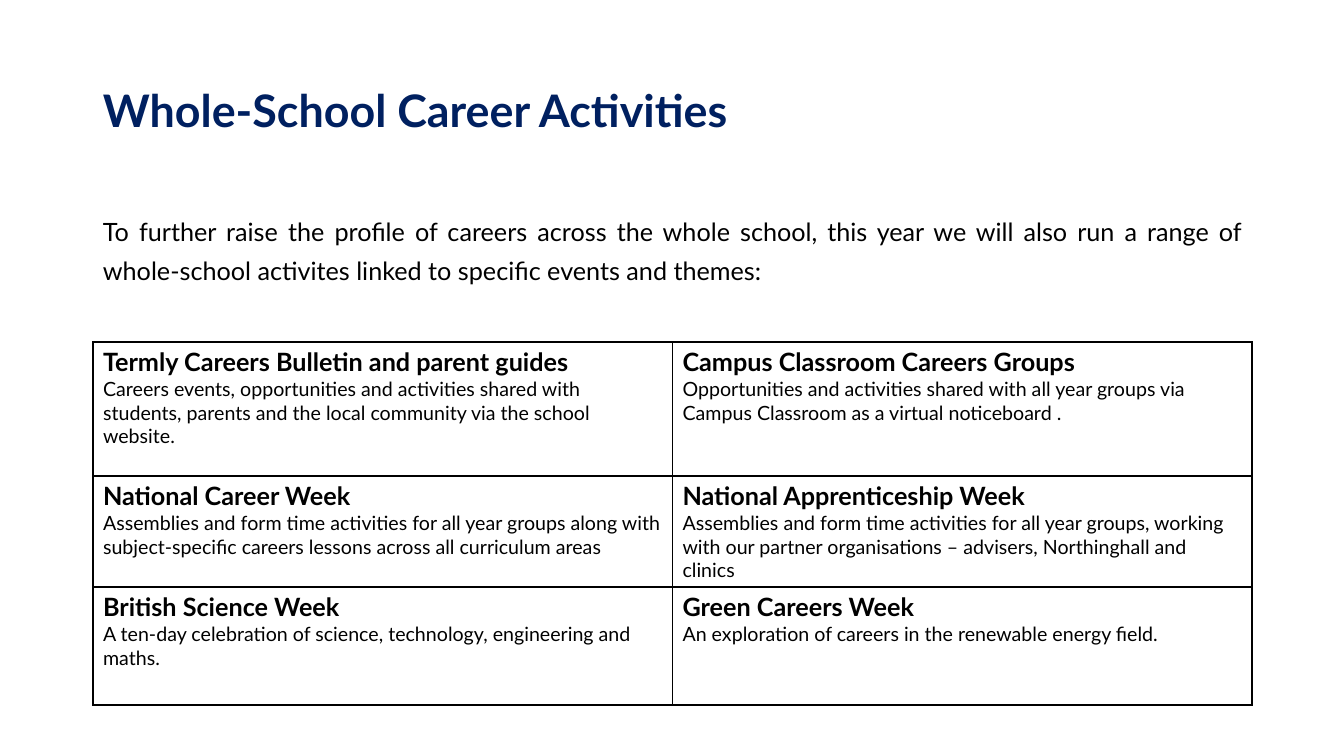
from lxml.etree import SubElement
from pptx import Presentation
from pptx.dml.color import RGBColor
from pptx.enum.text import MSO_ANCHOR, PP_ALIGN
from pptx.oxml.ns import qn
from pptx.util import Pt

TITLE = "Whole-School Career Activities"
INTRO = (
    "To further raise the profile of careers across the whole school, this year we will also "
    "run a range of whole-school activites linked to specific events and themes:"
)
ACTIVITIES = [
    [
        ("Termly Careers Bulletin and parent guides",
         "Careers events, opportunities and activities shared with students, parents and the "
         "local community via the school website."),
        ("Campus Classroom Careers Groups",
         "Opportunities and activities shared with all year groups via Campus Classroom as a "
         "virtual noticeboard ."),
    ],
    [
        ("National Career Week",
         "Assemblies and form time activities for all year groups along with subject-specific "
         "careers lessons across all curriculum areas"),
        ("National Apprenticeship Week",
         "Assemblies and form time activities for all year groups, working with our partner "
         "organisations – advisers, Northinghall and clinics"),
    ],
    [
        ("British Science Week",
         "A ten-day celebration of science, technology, engineering and maths."),
        ("Green Careers Week",
         "An exploration of careers in the renewable energy field."),
    ],
]
ROW_HEIGHTS = [134, 111, 118]
LEFT, WIDTH = 93, 1159
FONT = "Lato"
BLACK, NAVY = "000000", "002060"


def px(length):
    return round(length * 914400 / 100.8)


def colour(code):
    return RGBColor.from_string(code)


def write(paragraph, text, size=18, bold=False, ink=BLACK, align=PP_ALIGN.LEFT, spacing=1.0):
    paragraph.alignment = align
    paragraph.line_spacing = spacing
    run = paragraph.add_run()
    run.text = text
    run.font.name = FONT
    run.font.size = Pt(size)
    run.font.bold = bold
    run.font.color.rgb = colour(ink)


def add_text(slide, text, top, height, anchor=MSO_ANCHOR.TOP, **text_format):
    frame = slide.shapes.add_textbox(px(LEFT), px(top), px(WIDTH), px(height)).text_frame
    frame.word_wrap = True
    frame.vertical_anchor = anchor
    write(frame.paragraphs[0], text, **text_format)


def outline(cell):
    properties = cell._tc.get_or_add_tcPr()
    for side in ("a:lnL", "a:lnR", "a:lnT", "a:lnB"):
        line = SubElement(properties, qn(side), w=str(Pt(1)))
        fill = SubElement(line, qn("a:solidFill"))
        SubElement(fill, qn("a:srgbClr"), val=BLACK)


def add_activities(slide, top):
    rows, columns = len(ACTIVITIES), len(ACTIVITIES[0])
    table = slide.shapes.add_table(
        rows, columns, px(LEFT), px(top), px(WIDTH), px(sum(ROW_HEIGHTS))
    ).table
    table.first_row = False
    table.horz_banding = False
    for row, height in zip(table.rows, ROW_HEIGHTS):
        row.height = px(height)
    for r, activities in enumerate(ACTIVITIES):
        for c, (activity, details) in enumerate(activities):
            cell = table.cell(r, c)
            outline(cell)
            cell.fill.background()
            write(cell.text_frame.paragraphs[0], activity, bold=True)
            write(cell.text_frame.add_paragraph(), details, size=14)


def main():
    deck = Presentation()
    deck.slide_width, deck.slide_height = px(1344), px(756)
    slide = deck.slides.add_slide(deck.slide_layouts[6])
    add_text(slide, TITLE, 40, 146, anchor=MSO_ANCHOR.MIDDLE,
             size=32, bold=True, ink=NAVY, spacing=0.9)
    add_text(slide, INTRO, 202, 87, align=PP_ALIGN.JUSTIFY, spacing=1.3)
    add_activities(slide, 342)
    deck.save("out.pptx")


if __name__ == "__main__":
    main()
